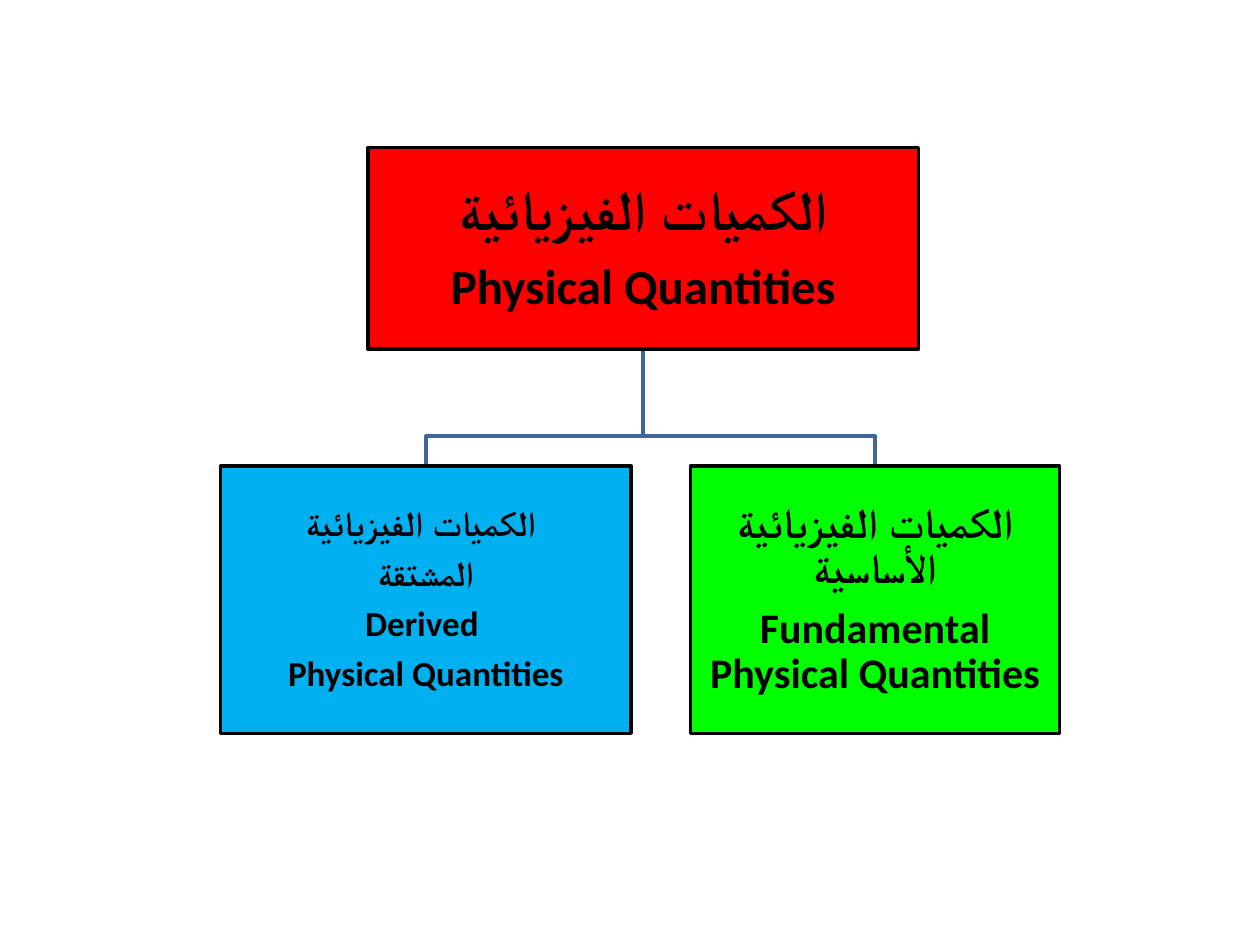
from dataclasses import dataclass

from pptx import Presentation
from pptx.dml.color import RGBColor
from pptx.enum.shapes import MSO_SHAPE
from pptx.enum.text import MSO_ANCHOR, PP_ALIGN
from pptx.util import Inches, Pt

RECTANGLE = MSO_SHAPE.RECTANGLE
MIDDLE = MSO_ANCHOR.MIDDLE
CENTER = PP_ALIGN.CENTER


@dataclass(frozen=True)
class Theme:
    font: str = "Calibri"
    ink: str = "000000"
    link: str = "3F6797"
    root: str = "FF0000"
    derived: str = "00B0F0"
    fundamental: str = "00FF00"
    line_width: float = 2
    title_size: float = 32
    subtitle_size: float = 28
    derived_size: float = 20
    fundamental_size: float = 24
    line_spacing: float = 0.9
    space_after: float = 0.35  # share of the type size


@dataclass(frozen=True)
class Line:
    text: str
    size: float
    rtl: bool = False


@dataclass(frozen=True)
class Node:
    left: float
    top: float
    width: float
    height: float
    fill: str
    inset: float
    lines: tuple[Line, ...]

    @property
    def center(self) -> float:
        return self.left + self.width / 2

    @property
    def bottom(self) -> float:
        return self.top + self.height


THEME = Theme()
BRANCH_Y = 3.46
CHILD_TOP, CHILD_HEIGHT = 3.7, 2.12

ROOT = Node(2.92, 1.17, 4.37, 1.6, THEME.root, 0.02, (
    Line("الكميات الفيزيائية", THEME.title_size),
    Line("Physical Quantities", THEME.subtitle_size),
))
CHILDREN = (
    Node(1.75, CHILD_TOP, 3.26, CHILD_HEIGHT, THEME.derived, 0.01, (
        Line("الكميات الفيزيائية ", THEME.derived_size),
        Line("المشتقة", THEME.derived_size, rtl=True),
        Line("Derived ", THEME.derived_size),
        Line("Physical Quantities", THEME.derived_size),
    )),
    Node(5.48, CHILD_TOP, 2.93, CHILD_HEIGHT, THEME.fundamental, 0.02, (
        Line("الكميات الفيزيائية الأساسية", THEME.fundamental_size, rtl=True),
        Line("Fundamental Physical Quantities", THEME.fundamental_size, rtl=True),
    )),
)


def set_all(target, values: dict) -> None:
    for name, value in values.items():
        setattr(target, name, value)


def style_line(sp, color: str) -> None:
    sp.shadow.inherit = False
    sp.line.color.rgb = RGBColor.from_string(color)
    sp.line.width = Pt(THEME.line_width)


def draw_link(s, parent: Node, child: Node) -> None:
    points = [(parent.center, BRANCH_Y), (child.center, BRANCH_Y),
              (child.center, child.top)]
    builder = s.shapes.build_freeform(Inches(parent.center), Inches(parent.bottom))
    builder.add_line_segments([(Inches(x), Inches(y)) for x, y in points], close=False)
    sp = builder.convert_to_shape()
    sp.fill.background()
    style_line(sp, THEME.link)


def write_line(p, line: Line) -> None:
    set_all(p, {"alignment": CENTER, "line_spacing": THEME.line_spacing,
                "space_after": Pt(line.size * THEME.space_after)})
    if line.rtl:
        p._p.get_or_add_pPr().set("rtl", "1")
    r = p.add_run()
    r.text = line.text
    set_all(r.font, {"name": THEME.font, "size": Pt(line.size), "bold": True})
    r.font.color.rgb = RGBColor.from_string(THEME.ink)


def draw_node(s, node: Node) -> None:
    sp = s.shapes.add_shape(RECTANGLE, Inches(node.left), Inches(node.top),
                            Inches(node.width), Inches(node.height))
    sp.fill.solid()
    sp.fill.fore_color.rgb = RGBColor.from_string(node.fill)
    style_line(sp, THEME.ink)
    tf = sp.text_frame
    inset = Inches(node.inset)
    set_all(tf, {"word_wrap": True, "vertical_anchor": MIDDLE,
                 "margin_left": inset, "margin_right": inset,
                 "margin_top": inset, "margin_bottom": inset})
    for i, line in enumerate(node.lines):
        write_line(tf.add_paragraph() if i else tf.paragraphs[0], line)


def main() -> None:
    prs = Presentation()
    set_all(prs, {"slide_width": Inches(10), "slide_height": Inches(7.5)})
    s = prs.slides.add_slide(prs.slide_layouts[6])

    # Links lie behind the boxes
    for child in CHILDREN:
        draw_link(s, ROOT, child)

    # Boxes
    for node in (ROOT, *CHILDREN):
        draw_node(s, node)

    prs.save("out.pptx")


if __name__ == "__main__":
    main()
